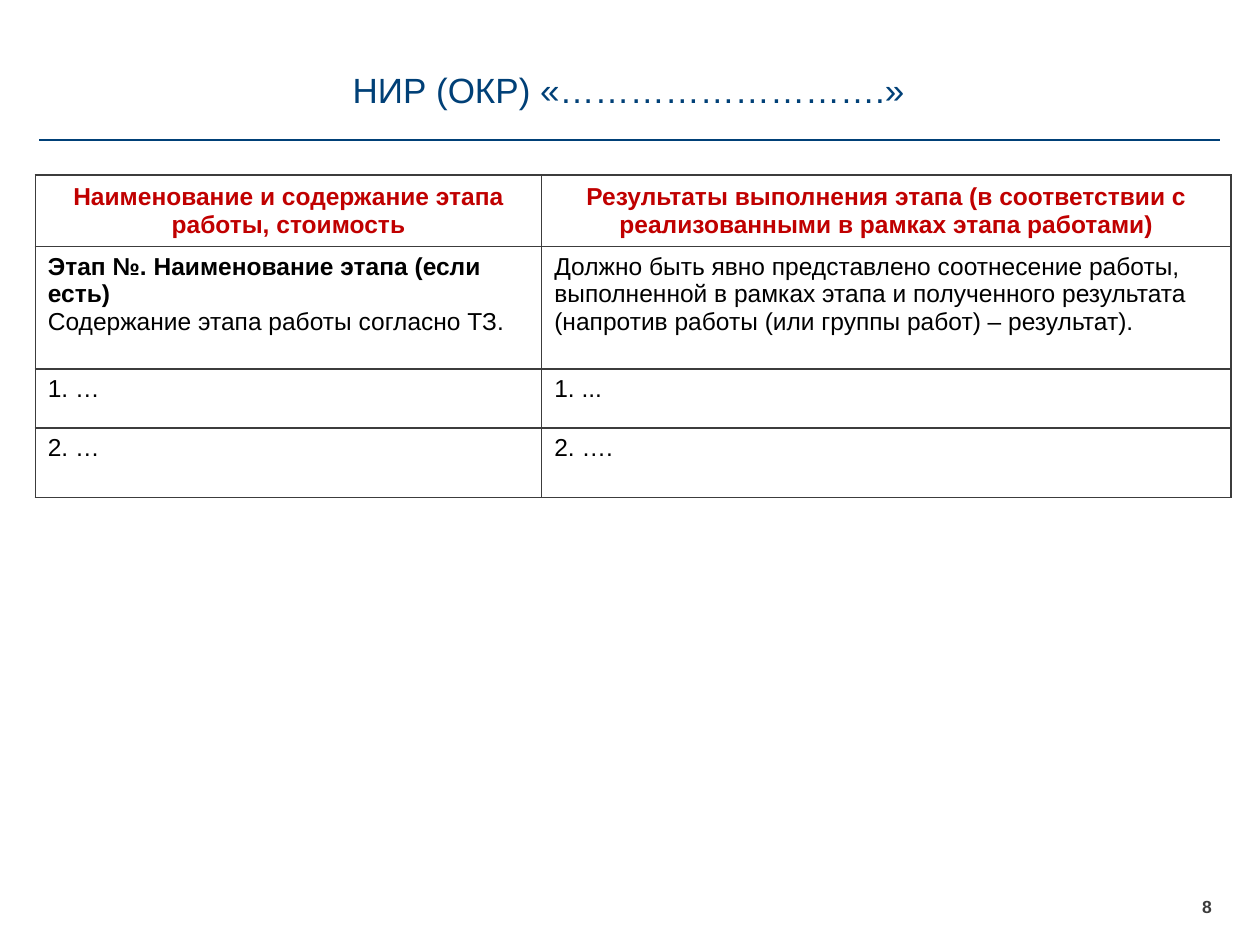
from dataclasses import dataclass

from lxml.etree import SubElement
from pptx import Presentation
from pptx.dml.color import RGBColor
from pptx.enum.shapes import MSO_CONNECTOR as Connector
from pptx.enum.text import MSO_ANCHOR as Anchor, PP_ALIGN as Align
from pptx.oxml.ns import qn
from pptx.util import Inches, Pt


@dataclass(frozen=True)
class Theme:
    font: str = "Arial"
    navy: str = "004077"
    red: str = "C00000"
    black: str = "000000"
    grey: str = "3C3C3C"
    title_size: int = 20
    table_size: int = 14
    number_size: int = 10
    line_width: int = 1


@dataclass(frozen=True)
class Line:
    text: str
    color: str
    size: int
    bold: bool = False
    align: Align = Align.LEFT


@dataclass(frozen=True)
class Box:
    left: float
    top: float
    width: float
    height: float

    def emu(self) -> list[int]:
        return [Inches(v) for v in (self.left, self.top, self.width, self.height)]


THEME = Theme()
SLIDE_WIDTH, SLIDE_HEIGHT = 10, 7.5
COLUMN_WIDTHS = (4.02, 5.47)
ROW_HEIGHTS = (0.54, 0.97, 0.47, 0.55)
TABLE_BOX = Box(0.28, 1.39, sum(COLUMN_WIDTHS), sum(ROW_HEIGHTS))
TITLE_BOX = Box(0.31, 0.21, 9.36, 0.67)
NUMBER_BOX = Box(9.54, 7.11, 0.24, 0.18)
RULE_LEFT, RULE_RIGHT, RULE_TOP = 0.31, 9.68, 1.11


def heading(text: str) -> list[Line]:
    return [Line(text, THEME.red, THEME.table_size, True, Align.CENTER)]


def body(text: str, bold: bool = False) -> Line:
    return Line(text, THEME.black, THEME.table_size, bold)


STAGES = [
    [
        heading("Наименование и содержание этапа работы, стоимость"),
        heading("Результаты выполнения этапа (в соответствии с "
                "реализованными в рамках этапа работами)"),
    ],
    [
        [body("Этап №. Наименование этапа (если есть)", bold=True),
         body("Содержание этапа работы согласно ТЗ.")],
        [body("Должно быть явно представлено соотнесение работы, выполненной "
              "в рамках этапа и полученного результата (напротив работы "
              "(или группы работ) – результат).")],
    ],
    [[body("1. …")], [body("1. ...")]],
    [[body("2. …")], [body("2. ….")]],
]


def write(frame, lines: list[Line]) -> None:
    for index, line in enumerate(lines):
        paragraph = frame.paragraphs[0] if index == 0 else frame.add_paragraph()
        paragraph.alignment = line.align
        run = paragraph.add_run()
        run.text = line.text
        run.font.name = THEME.font
        run.font.size = Pt(line.size)
        run.font.bold = line.bold
        run.font.color.rgb = RGBColor.from_string(line.color)


def add_text(slide, box: Box, line: Line, anchor: Anchor) -> None:
    frame = slide.shapes.add_textbox(*box.emu()).text_frame
    frame.word_wrap = True
    frame.vertical_anchor = anchor
    frame.margin_left = frame.margin_right = 0
    frame.margin_top = frame.margin_bottom = 0
    write(frame, [line])


def add_rule(slide) -> None:
    rule = slide.shapes.add_connector(
        Connector.STRAIGHT, Inches(RULE_LEFT), Inches(RULE_TOP),
        Inches(RULE_RIGHT), Inches(RULE_TOP))
    rule.line.color.rgb = RGBColor.from_string(THEME.navy)
    rule.line.width = Pt(THEME.line_width)
    SubElement(rule._element.spPr, qn("a:effectLst"))


def set_borders(cell) -> None:
    properties = cell._tc.get_or_add_tcPr()
    for side in ("a:lnL", "a:lnR", "a:lnT", "a:lnB"):
        border = SubElement(properties, qn(side), w=str(Pt(THEME.line_width)))
        fill = SubElement(border, qn("a:solidFill"))
        SubElement(fill, qn("a:srgbClr"), val=THEME.grey)


def add_stage_table(slide) -> None:
    table = slide.shapes.add_table(
        len(ROW_HEIGHTS), len(COLUMN_WIDTHS), *TABLE_BOX.emu()).table
    table.horz_banding = False
    for column, width in zip(table.columns, COLUMN_WIDTHS):
        column.width = Inches(width)
    for row, height in zip(table.rows, ROW_HEIGHTS):
        row.height = Inches(height)
    for row_index, stage in enumerate(STAGES):
        for column_index, lines in enumerate(stage):
            cell = table.cell(row_index, column_index)
            cell.vertical_anchor = Anchor.MIDDLE if row_index == 0 else Anchor.TOP
            set_borders(cell)
            cell.fill.background()
            write(cell.text_frame, lines)


def main() -> None:
    deck = Presentation()
    deck.slide_width, deck.slide_height = Inches(SLIDE_WIDTH), Inches(SLIDE_HEIGHT)
    slide = deck.slides.add_slide(deck.slide_layouts[6])
    add_rule(slide)
    add_text(slide, NUMBER_BOX,
             Line("8", THEME.grey, THEME.number_size, bold=True), Anchor.TOP)
    add_stage_table(slide)
    add_text(slide, TITLE_BOX,
             Line("НИР (ОКР) «……………………….»", THEME.navy, THEME.title_size,
                  align=Align.CENTER), Anchor.BOTTOM)
    deck.save("out.pptx")


if __name__ == "__main__":
    main()
